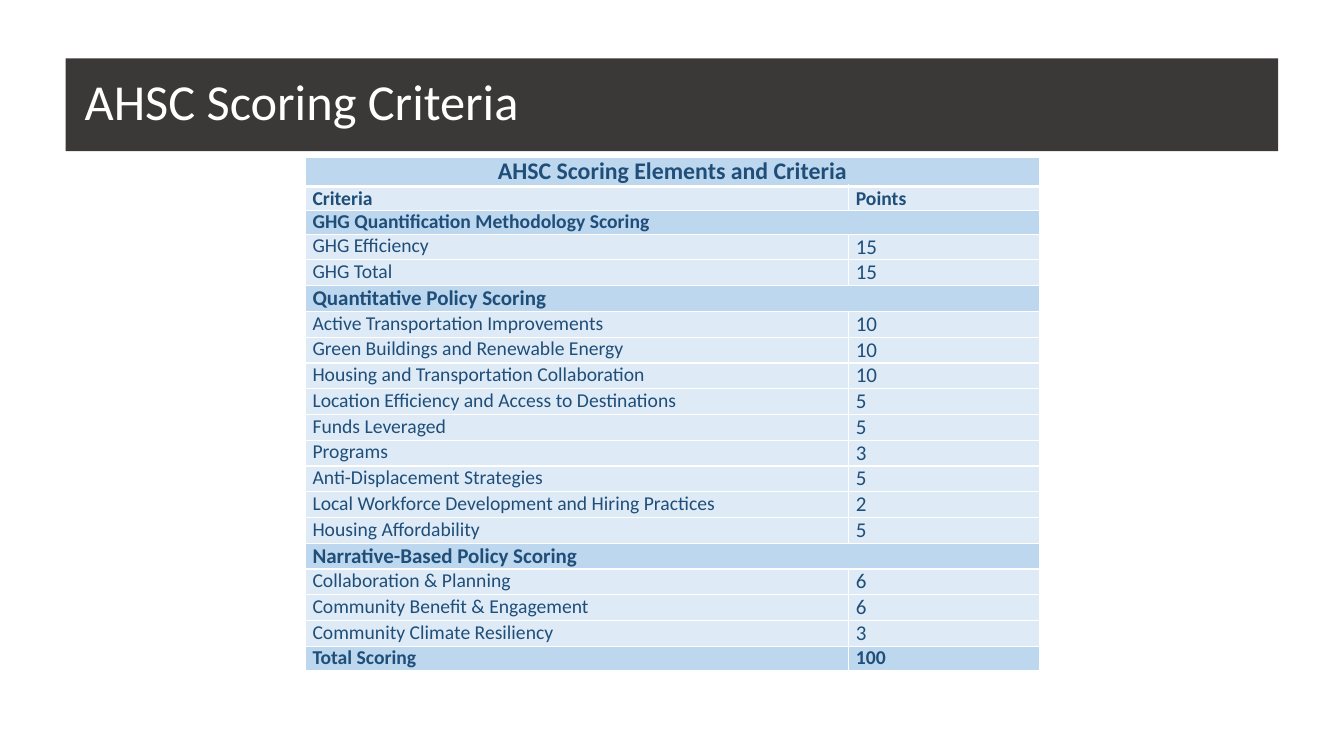
from dataclasses import dataclass

from lxml.etree import SubElement
from pptx import Presentation
from pptx.dml.color import RGBColor
from pptx.enum.shapes import MSO_SHAPE as Shape
from pptx.enum.text import MSO_ANCHOR as Anchor, MSO_AUTO_SIZE as AutoSize, PP_ALIGN as Align
from pptx.oxml.ns import qn
from pptx.util import Inches, Pt

WIDTH, HEIGHT = Inches(13.33), Inches(7.5)
NAVY, SKY, PALE = "1F4E79", "BDD7EE", "DEEBF7"
CHARCOAL, WHITE = "3B3838", "FFFFFF"
COLUMN_SHARES = (40.43, 14.18)
TALL, NORMAL, SHORT = 3.73, 3.33, 3.07


@dataclass(frozen=True)
class Box:
    """Position and size in percent of the slide."""
    left: float
    top: float
    width: float
    height: float

    def emu(self) -> tuple[int, int, int, int]:
        return across(self.left), down(self.top), across(self.width), down(self.height)


@dataclass(frozen=True)
class Row:
    label: str
    points: str = ""
    fill: str = PALE
    bold: bool = False
    label_size: int = 14
    points_size: int = 15
    height: float = NORMAL
    align: Align = Align.LEFT
    space_after: int = 6


def heading(label: str, **changes) -> Row:
    return Row(label, **{"fill": SKY, "bold": True, "label_size": 15, **changes})


SCORING = [
    heading("AHSC Scoring Elements and Criteria", label_size=17, height=TALL,
            align=Align.CENTER, space_after=0),
    Row("Criteria", "Points", bold=True, points_size=14, height=SHORT),
    heading("GHG Quantification Methodology Scoring", label_size=14, height=SHORT),
    Row("GHG Efficiency", "15"),
    Row("GHG Total", "15"),
    heading("Quantitative Policy Scoring"),
    Row("Active Transportation Improvements", "10"),
    Row("Green Buildings and Renewable Energy", "10"),
    Row("Housing and Transportation Collaboration", "10"),
    Row("Location Efficiency and Access to Destinations", "5"),
    Row("Funds Leveraged", "5"),
    Row("Programs", "3"),
    Row("Anti-Displacement Strategies", "5"),
    Row("Local Workforce Development and Hiring Practices", "2"),
    Row("Housing Affordability", "5"),
    heading("Narrative-Based Policy Scoring"),
    Row("Collaboration & Planning", "6"),
    Row("Community Benefit & Engagement", "6"),
    Row("Community Climate Resiliency", "3"),
    heading("Total Scoring", points="100", label_size=14, points_size=14, height=SHORT),
]


def across(percent: float) -> int:
    return round(WIDTH * percent / 100)


def down(percent: float) -> int:
    return round(HEIGHT * percent / 100)


def paint(fill, color: str) -> None:
    fill.solid()
    fill.fore_color.rgb = RGBColor.from_string(color)


def write(frame, text: str, *, size: int, color: str, bold: bool = False,
          align: Align = Align.LEFT, space_after: int = 0, line_spacing: float = 1.0) -> None:
    paragraph = frame.paragraphs[0]
    paragraph.alignment = align
    paragraph.space_after = Pt(space_after)
    paragraph.line_spacing = line_spacing
    run = paragraph.add_run()
    run.text = text
    run.font.name, run.font.size, run.font.bold = "Calibri", Pt(size), bold
    run.font.color.rgb = RGBColor.from_string(color)


def add_borders(cell, top: int, bottom: int) -> None:
    """Draw white cell edges; top and bottom are widths in points."""
    properties = cell._tc.get_or_add_tcPr()
    for side, width in (("L", 1), ("R", 1), ("T", top), ("B", bottom)):
        line = SubElement(properties, qn(f"a:ln{side}"), w=str(Pt(width)))
        SubElement(SubElement(line, qn("a:solidFill")), qn("a:srgbClr"), val=WHITE)


def add_scoring_table(slide, rows: list[Row]) -> None:
    box = Box(22.73, 20.8, sum(COLUMN_SHARES), sum(row.height for row in rows))
    table = slide.shapes.add_table(len(rows), len(COLUMN_SHARES), *box.emu()).table
    for column, share in zip(table.columns, COLUMN_SHARES):
        column.width = across(share)
    for index, row in enumerate(rows):
        table.rows[index].height = down(row.height)
        label, points = table.cell(index, 0), table.cell(index, 1)
        if not row.points:
            label.merge(points)
        for cell, text, size in ((label, row.label, row.label_size),
                                 (points, row.points, row.points_size)):
            cell.margin_left = cell.margin_right = Inches(0.07)
            cell.margin_top = cell.margin_bottom = 0
            add_borders(cell, top=3 if index == 1 else 1, bottom=3 if index == 0 else 1)
            paint(cell.fill, row.fill)
            if text:
                write(cell.text_frame, text, size=size, color=NAVY, bold=row.bold,
                      align=row.align, space_after=row.space_after)


def add_banner(slide) -> None:
    banner = slide.shapes.add_shape(Shape.RECTANGLE, *Box(4.88, 7.73, 90.23, 12.27).emu())
    banner.shadow.inherit = False
    paint(banner.fill, CHARCOAL)
    banner.line.fill.background()


def set_title(slide, text: str) -> None:
    """Fill the title placeholder and bring it in front of the banner."""
    title = slide.shapes.title
    title.left, title.top, title.width, title.height = Box(5.55, 4.13, 80.78, 19.33).emu()
    frame = title.text_frame
    frame.word_wrap = True
    frame.auto_size = AutoSize.NONE
    frame.vertical_anchor = Anchor.MIDDLE
    write(frame, text, size=36, color=WHITE, line_spacing=0.9)
    slide.shapes._spTree.append(title._element)


def main() -> None:
    deck = Presentation()
    deck.slide_width, deck.slide_height = WIDTH, HEIGHT
    slide = deck.slides.add_slide(deck.slide_layouts.get_by_name("Title Only"))
    paint(slide.background.fill, WHITE)
    add_scoring_table(slide, SCORING)
    add_banner(slide)
    set_title(slide, "AHSC Scoring Criteria")
    deck.save("out.pptx")


if __name__ == "__main__":
    main()
